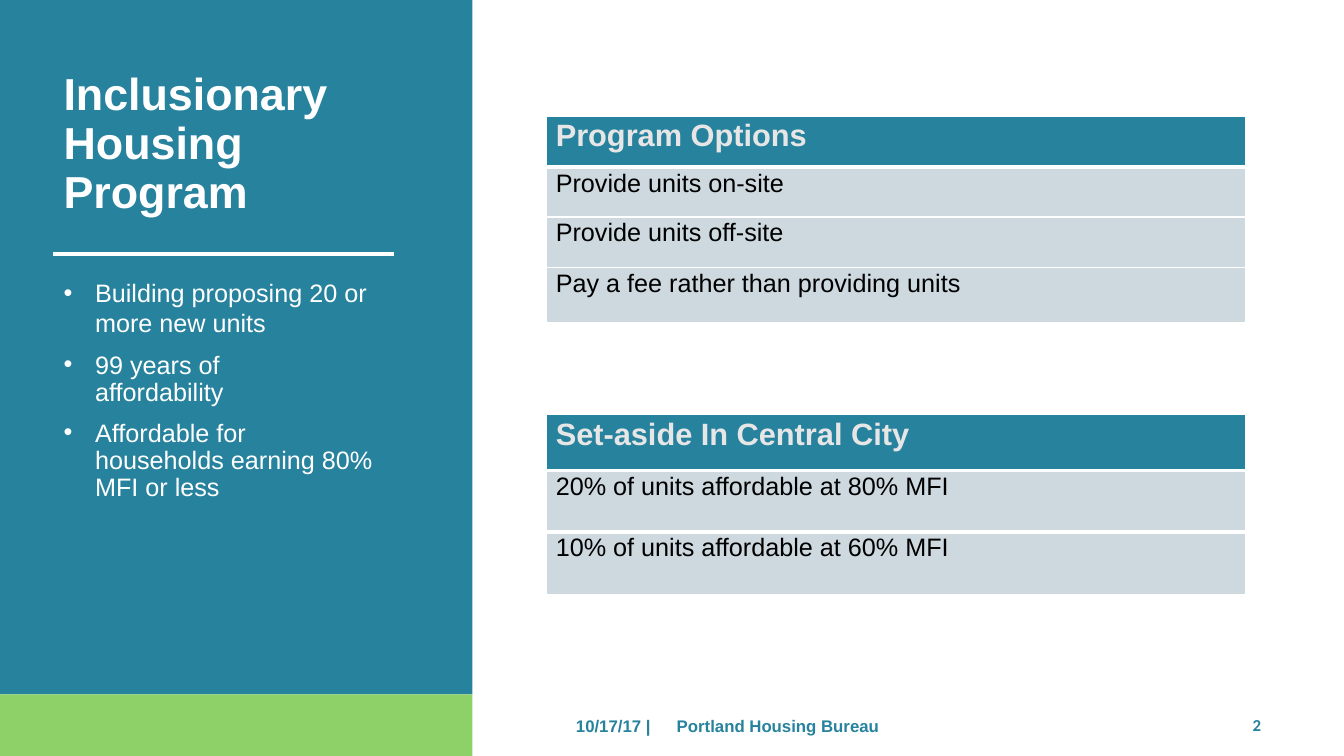
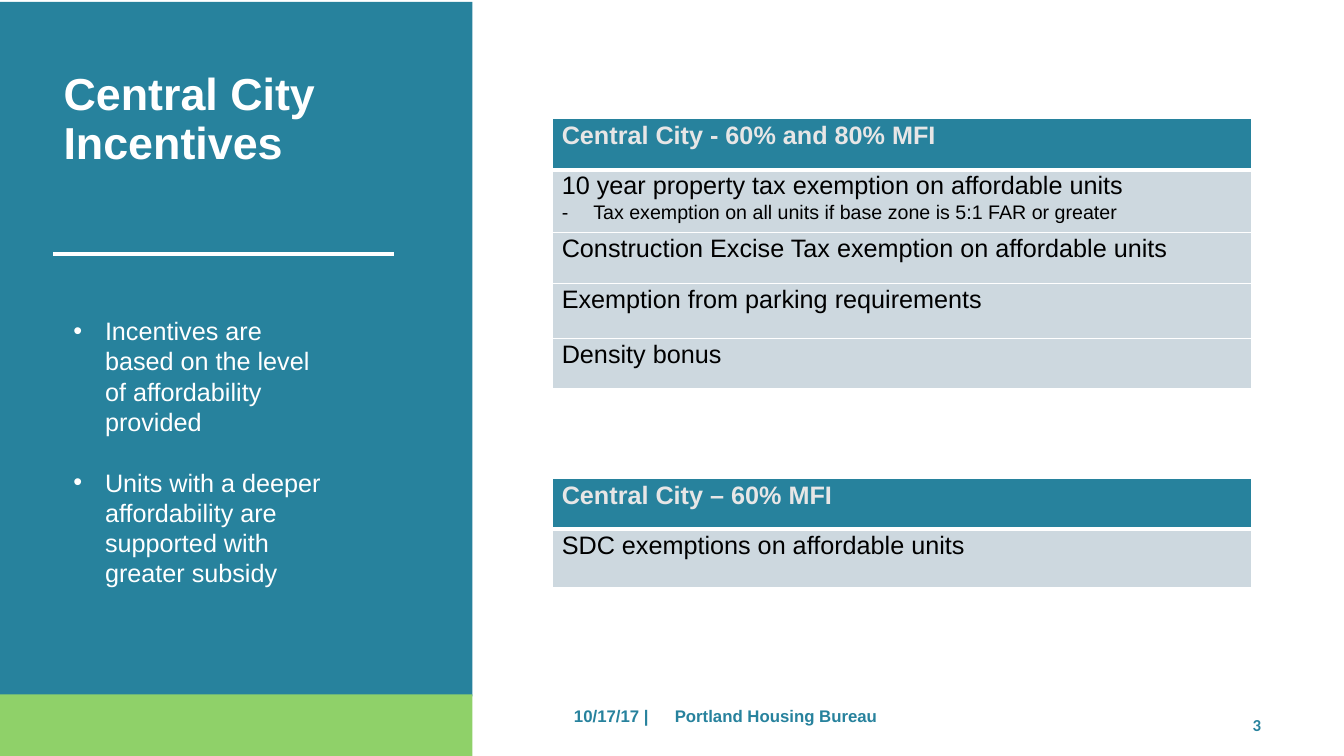
from dataclasses import dataclass

from lxml import etree
from pptx import Presentation
from pptx.dml.color import RGBColor
from pptx.enum.shapes import MSO_CONNECTOR, MSO_SHAPE
from pptx.oxml.ns import qn
from pptx.util import Pt

RECT = MSO_SHAPE.RECTANGLE
LINE = MSO_CONNECTOR.STRAIGHT
TEAL, GREEN, WHITE = "27829D", "8FD169", "FFFFFF"
PALE, LIGHT, BLACK = "CDD8DF", "E7E6E6", "000000"
SIDE = 337.5  # width of the coloured side panel
SPLIT = 496  # where the green foot of the panel starts
EDGE = 45.4  # left edge of the panel text
WIDE = 499  # table width
HANG = 22.5  # bullet indent
PAD = 6.5  # indent of table text


@dataclass
class Item:
    text: str
    gap: float = 0
    lead: float = 21.6


@dataclass
class Box:
    left: float
    top: float
    width: float
    height: float
    inset: tuple = (0, 0, 0, 0)


@dataclass
class Row:
    height: float
    text: str
    sub: str = ""
    rule: float = 1  # thickness of the line below


@dataclass
class Grid:
    left: float
    top: float
    size: float
    rows: list[Row]


@dataclass
class Page:
    title: str
    tall: float
    top: float
    foot: tuple[float, float]
    list_box: Box
    items: list[Item]
    grids: list[Grid]


def hue(code: str) -> RGBColor:
    return RGBColor.from_string(code)


def write(frame, text: str, *, size=18, color=BLACK, bold=False, font="Arial",
          gap=0, lead=None, indent=0, hang=0, mark="", tabs=()):
    """Fill the empty first paragraph, or add one, with formatted text."""
    para = frame.paragraphs[0]
    if para.runs:
        para = frame.add_paragraph()
    para.text = text
    para.space_before = Pt(gap)
    if lead:
        para.line_spacing = Pt(lead)
    for run in para.runs:
        run.font.name, run.font.size, run.font.bold = font, Pt(size), bold
        run.font.color.rgb = hue(color)
    props = para._p.get_or_add_pPr()
    props.set("marL", str(Pt(indent)))
    props.set("indent", str(Pt(-hang)))
    if mark:
        etree.SubElement(props, qn("a:buFont"), typeface="Arial")
        etree.SubElement(props, qn("a:buChar"), char=mark)
    if tabs:
        stops = etree.SubElement(props, qn("a:tabLst"))
        for stop in tabs:
            etree.SubElement(stops, qn("a:tab"), pos=str(Pt(stop)), algn="l")


def pad(item, inset: tuple):
    """Set the margins of a text frame or cell: left, top, right, bottom."""
    (item.margin_left, item.margin_top,
     item.margin_right, item.margin_bottom) = map(Pt, inset)


def add_box(slide, box: Box):
    frame = slide.shapes.add_textbox(
        Pt(box.left), Pt(box.top), Pt(box.width), Pt(box.height)).text_frame
    frame.word_wrap = True
    pad(frame, box.inset)
    return frame


def add_band(slide, top: float, height: float, color: str):
    band = slide.shapes.add_shape(RECT, Pt(0), Pt(top), Pt(SIDE), Pt(height))
    band.shadow.inherit = False
    band.fill.solid()
    band.fill.fore_color.rgb = hue(color)
    band.line.fill.background()


def add_rule(slide):
    rule = slide.shapes.add_connector(LINE, Pt(38), Pt(181.5), Pt(281.5), Pt(181.5))
    rule.line.color.rgb = hue(WHITE)
    rule.line.width = Pt(2.58)
    etree.SubElement(rule._element.spPr, qn("a:effectLst"))


def edge(cell, above: float, below: float):
    """Draw white borders; the fill must be set afterwards."""
    props = cell._tc.get_or_add_tcPr()
    for side, width in (("L", 1), ("R", 1), ("T", above), ("B", below)):
        line = etree.SubElement(props, qn("a:ln" + side), w=str(Pt(width)))
        fill = etree.SubElement(line, qn("a:solidFill"))
        etree.SubElement(fill, qn("a:srgbClr"), val=WHITE)


def add_grid(slide, grid: Grid):
    total = sum(row.height for row in grid.rows)
    table = slide.shapes.add_table(
        len(grid.rows), 1, Pt(grid.left), Pt(grid.top), Pt(WIDE), Pt(total)).table
    table.horz_banding = False
    above = 1
    for i, row in enumerate(grid.rows):
        head = i == 0
        below = 3 if head else row.rule
        table.rows[i].height = Pt(row.height)
        cell = table.cell(i, 0)
        edge(cell, above, below)
        above = below
        cell.fill.solid()
        cell.fill.fore_color.rgb = hue(TEAL if head else PALE)
        pad(cell, (0, 2 if head else 1.5, 0, 0))
        write(cell.text_frame, row.text, size=grid.size if head else 18,
              color=LIGHT if head else BLACK, bold=head, indent=PAD)
        if row.sub:
            write(cell.text_frame, row.sub, size=14, gap=1.1,
                  indent=PAD + HANG, hang=HANG, mark="-")


def add_page(deck, page: Page, number: int):
    slide = deck.slides.add_slide(deck.slide_layouts[6])
    add_band(slide, page.top, SPLIT, TEAL)
    add_band(slide, SPLIT, 540 - SPLIT, GREEN)
    add_rule(slide)
    write(add_box(slide, Box(EDGE, 46, 222.5, page.tall, (0, 5, 0, 0))),
          page.title, size=32, color=WHITE, bold=True, lead=34.7)
    frame = add_box(slide, page.list_box)
    for item in page.items:
        write(frame, item.text, color=WHITE, gap=item.gap, lead=item.lead,
              indent=HANG, hang=HANG, mark="•")
    for grid in page.grids:
        add_grid(slide, grid)
    write(add_box(slide, Box(*page.foot, 480, 14.4)),
          "\t10/17/17 |\tPortland Housing Bureau", size=12, color=TEAL,
          bold=True, lead=14.2, indent=1, tabs=(258.5, 322))
    write(add_box(slide, Box(892.8, 509.8, 10, 16.6, (0, 1, 0, 0))),
          str(number), size=12, color=TEAL, bold=True, font="Calibri", indent=2)


PAGES = [
    Page("Inclusionary\nHousing\nProgram", 111.5, 0, (374.4, 511.2),
         Box(EDGE, 189.4, 222.5, 172, (0, 8.6, 0, 0)),
         [Item("Building proposing 20 or more new units"),
          Item("99 years of\naffordability", 9.9, 19.7),
          Item("Affordable for households earning 80% MFI or less", 9.5, 19.4)],
         [Grid(390.5, 83, 22, [
             Row(36.5, "Program Options"),
             Row(35.5, "Provide units on-site"),
             Row(36, "Provide units off-site"),
             Row(39.5, "Pay a fee rather than providing units")]),
          Grid(390.5, 296, 22, [
              Row(40, "Set-aside In Central City"),
              Row(44, "20% of units affordable at 80% MFI", rule=3),
              Row(44.5, "10% of units affordable at 60% MFI")])]),
    Page("Central City\nIncentives", 75.5, 1.4, (373, 504),
         Box(EDGE, 221.8, 201, 204, (7.2, 3.6, 14, 3.6)),
         [Item("Incentives are based on the level of affordability provided"),
          Item("Units with a deeper affordability are supported with "
               "greater subsidy", 21.8)],
         [Grid(394.8, 84.8, 18, [
             Row(36.5, "Central City - 60% and 80% MFI"),
             Row(45, "10 year property tax exemption on affordable units",
                 "Tax exemption on all units if base zone is 5:1 FAR or greater"),
             Row(36, "Construction Excise Tax exemption on affordable units"),
             Row(39.5, "Exemption from parking requirements"),
             Row(36, "Density bonus")]),
          Grid(394.8, 342, 18, [
              Row(36, "Central City – 60% MFI"),
              Row(41.5, "SDC exemptions on affordable units")])]),
]


def main():
    deck = Presentation()
    deck.slide_width, deck.slide_height = Pt(960), Pt(540)
    for number, page in enumerate(PAGES, start=2):
        add_page(deck, page, number)
    deck.save("out.pptx")


if __name__ == "__main__":
    main()
